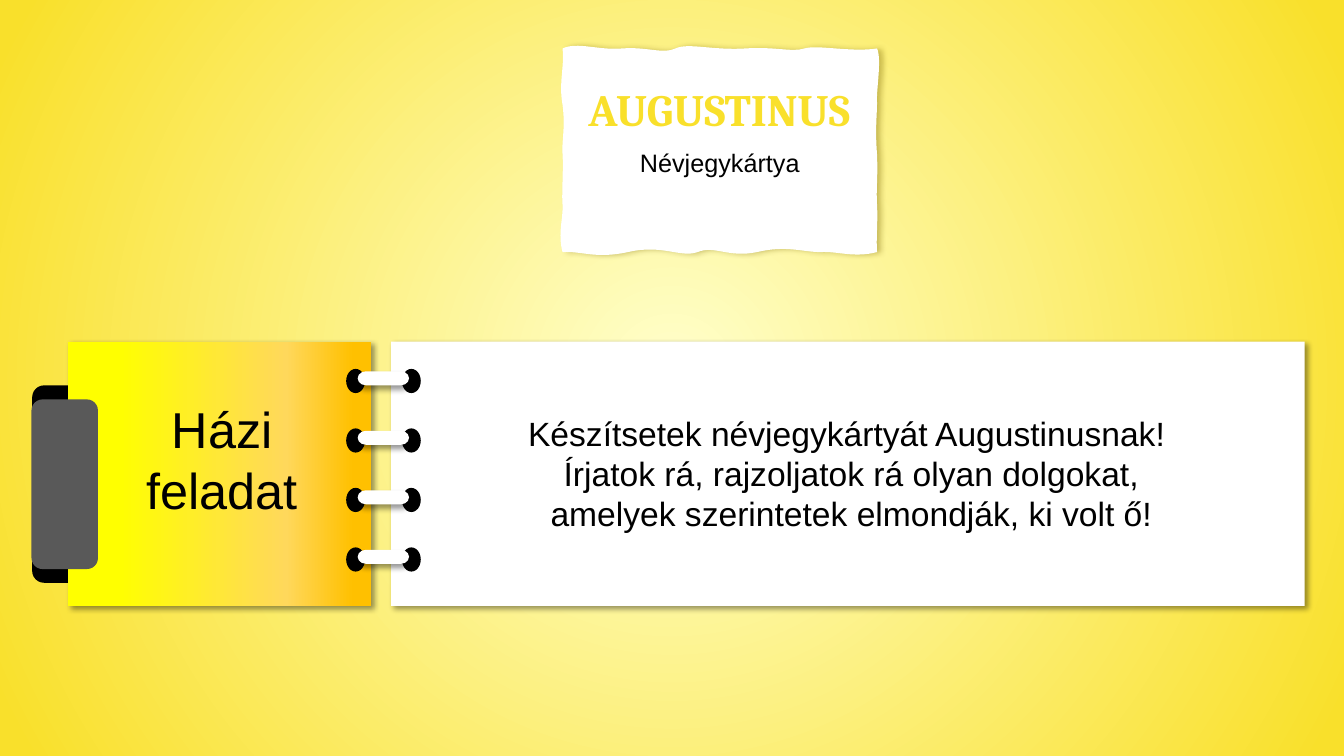
import pptx
import pptx.util
import pptx.dml.color
import pptx.enum.shapes
import pptx.enum.text
import pptx.oxml
import pptx.oxml.ns

Pt = pptx.util.Pt
RGBColor = pptx.dml.color.RGBColor
SHAPE = pptx.enum.shapes.MSO_SHAPE
NAMESPACE = pptx.oxml.ns.nsdecls("a")

BLACK = RGBColor(0x00, 0x00, 0x00)
WHITE = RGBColor(0xFF, 0xFF, 0xFF)
GREY = RGBColor(0x59, 0x59, 0x59)
CREAM = RGBColor(0xFF, 0xFF, 0xCC)
YELLOW = RGBColor(0xF9, 0xE0, 0x2B)
ORANGE = RGBColor(0xFF, 0xC0, 0x00)
APRICOT = RGBColor(0xFF, 0xD8, 0x5B)
LEMON = RGBColor(0xFF, 0xFF, 0x00)
OLIVE = RGBColor(0x81, 0x6D, 0x09)

CENTRE_PATH = '<a:path path="circle"><a:fillToRect l="50000" t="50000" r="50000" b="50000"/></a:path>'
RIGHT_TO_LEFT = '<a:lin ang="10800000" scaled="0"/>'

# Torn outline of the card in hundredths of an inch: two handles and an end point per curve
CARD_CURVES = [
    ((15, -7), (35, 2), (59, 0)), ((84, -2), (100, 6), (112, 0)),
    ((125, -6), (148, 2), (181, 0)), ((213, -2), (227, 4), (240, 0)),
    ((253, -4), (286, 4), (312, 0)), ((317, 11), (311, 42), (312, 54)),
    ((312, 66), (310, 80), (312, 105)), ((313, 130), (311, 139), (312, 155)),
    ((313, 172), (311, 189), (312, 202)), ((289, 208), (273, 201), (256, 202)),
    ((238, 202), (222, 195), (193, 202)), ((164, 208), (151, 195), (134, 202)),
    ((117, 208), (99, 194), (65, 202)), ((32, 209), (21, 201), (0, 202)),
    ((-5, 184), (1, 166), (0, 155)), ((-1, 145), (1, 119), (0, 105)),
    ((-1, 91), (3, 79), (0, 56)), ((-4, 34), (2, 19), (0, 0)),
]


def set_gradient(fill, element, stops, direction):
    fill.gradient()
    gradient = element.find(".//" + pptx.oxml.ns.qn("a:gradFill"))
    colours = "".join(
        f'<a:gs pos="{position * 1000}"><a:srgbClr val="{colour}"/></a:gs>' for position, colour in stops)
    gradient.getparent().replace(gradient, pptx.oxml.parse_xml(
        f"<a:gradFill {NAMESPACE}><a:gsLst>{colours}</a:gsLst>{direction}</a:gradFill>"))


def add_shadow(shape, angle, colour=BLACK):
    shape.shadow.inherit = False
    effects = shape.element.spPr.find(pptx.oxml.ns.qn("a:effectLst"))
    effects.append(pptx.oxml.parse_xml(
        f'<a:outerShdw {NAMESPACE} blurRad="{Pt(4)}" dist="{Pt(3)}" dir="{angle * 60000}" '
        f'algn="tl" rotWithShape="0"><a:srgbClr val="{colour}"><a:alpha val="40000"/>'
        f'</a:srgbClr></a:outerShdw>'))


def paint(shape, colour):
    shape.shadow.inherit = False
    shape.fill.solid()
    shape.fill.fore_color.rgb = colour
    shape.line.fill.background()


def add_block(shapes, kind, left, top, width, height, colour):
    shape = shapes.add_shape(kind, Pt(left), Pt(top), Pt(width), Pt(height))
    paint(shape, colour)
    return shape


def write_text(text_frame, text, size, colour=BLACK, font="Arial", bold=False):
    text_frame.word_wrap = True
    text_frame.vertical_anchor = pptx.enum.text.MSO_ANCHOR.TOP
    text_frame.text = text
    for paragraph in text_frame.paragraphs:
        paragraph.alignment = pptx.enum.text.PP_ALIGN.CENTER
        for run in paragraph.runs:
            run.font.size = Pt(size)
            run.font.name = font
            run.font.bold = bold
            run.font.color.rgb = colour


def add_text(slide, left, top, width, height, text, size, **style):
    box = slide.shapes.add_textbox(Pt(left), Pt(top), Pt(width), Pt(height))
    write_text(box.text_frame, text, size, **style)


def add_label_tile(slide, left, top, width, height):
    """Yellow tile with the clip that grips its left edge."""
    add_block(slide.shapes, SHAPE.ROUNDED_RECTANGLE, left - 25.5, top + 31.2, 51, 141, BLACK)
    tile = add_block(slide.shapes, SHAPE.RECTANGLE, left, top, width, height, LEMON)
    set_gradient(tile.fill, tile.element, [(6, ORANGE), (28, APRICOT), (84, LEMON)], RIGHT_TO_LEFT)
    add_shadow(tile, 45)
    add_block(slide.shapes, SHAPE.ROUNDED_RECTANGLE, left - 26, top + 41.2, 47.5, 121.2, GREY)


def add_task_sheet(slide, left, top, width, height):
    sheet = add_block(slide.shapes, SHAPE.RECTANGLE, left, top, width, height, WHITE)
    add_shadow(sheet, 45)


def add_binder_rings(slide, left, top, pitch, count):
    for index in range(count):
        ring = slide.shapes.add_group_shape().shapes
        ring_top = top + index * pitch
        for eyelet_left in (left, left + 39.8):
            add_block(ring, SHAPE.OVAL, eyelet_left, ring_top, 13.5, 17.3, BLACK)
        bar = add_block(ring, SHAPE.FLOWCHART_TERMINATOR, left + 8.2, ring_top + 1.7, 36.7, 10, WHITE)
        add_shadow(bar, 90)


def add_curved_outline(slide, left, top, curves):
    """Closed freeform through the end points, each side bent by its two handles."""
    builder = slide.shapes.build_freeform(0, 0, scale=Pt(0.72))
    builder.add_line_segments([curve[-1] for curve in curves], close=True)
    shape = builder.convert_to_shape(Pt(left), Pt(top))
    sides = shape.element.findall(".//" + pptx.oxml.ns.qn("a:lnTo"))
    for side, curve in zip(sides, curves):
        points = "".join(f'<a:pt x="{x}" y="{y}"/>' for x, y in curve)
        side.getparent().replace(side, pptx.oxml.parse_xml(
            f"<a:cubicBezTo {NAMESPACE}>{points}</a:cubicBezTo>"))
    return shape


def add_name_card(slide, left, top):
    card = add_curved_outline(slide, left, top, CARD_CURVES)
    paint(card, WHITE)
    add_shadow(card, 359, OLIVE)
    card.text_frame.margin_top = Pt(70.4)
    write_text(card.text_frame, "Névjegykártya", 18)
    add_text(slide, left - 23, top + 20, 270, 46, "AUGUSTINUS", 32,
             colour=YELLOW, font="Cambria", bold=True)


def build_homework_slide(presentation):
    slide = presentation.slides.add_slide(presentation.slide_layouts[6])
    set_gradient(slide.background.fill, slide.element, [(0, CREAM), (97, YELLOW)], CENTRE_PATH)
    add_label_tile(slide, 48.5, 244.1, 216.7, 188.8)
    add_task_sheet(slide, 279.4, 244.1, 652.5, 188.8)
    add_binder_rings(slide, 247.3, 263.5, 42.5, 4)
    add_text(slide, 80.6, 281, 156, 94, "Házi feladat", 36)
    add_text(slide, 368, 291.3, 480, 94,
             "Készítsetek névjegykártyát Augustinusnak! \n"
             "Írjatok rá, rajzoljatok rá olyan dolgokat, amelyek szerintetek elmondják, ki volt ő!", 24)
    add_name_card(slide, 401.8, 34.6)


def main():
    presentation = pptx.Presentation()
    presentation.slide_width = Pt(960)
    presentation.slide_height = Pt(540)
    build_homework_slide(presentation)
    presentation.save("out.pptx")


if __name__ == "__main__":
    main()
